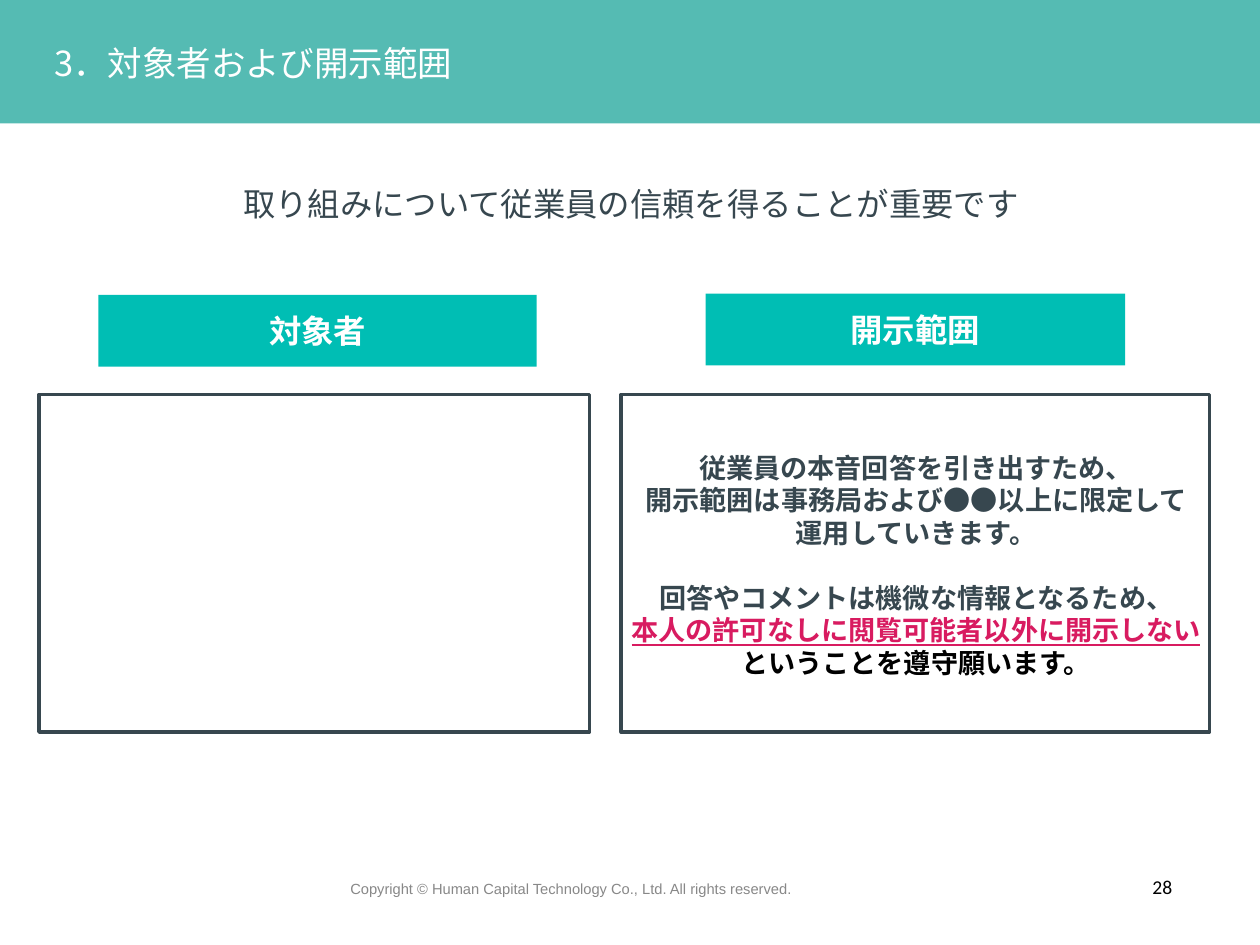
from lxml import etree
from pptx import Presentation
from pptx.dml.color import RGBColor
from pptx.enum import shapes, text
from pptx.oxml.ns import qn
from pptx.util import Inches, Pt

SLATE = RGBColor(0x37, 0x47, 0x4F)
BAND = RGBColor(0x55, 0xBB, 0xB3)
TEAL = RGBColor(0x00, 0xBE, 0xB4)
PINK = RGBColor(0xD8, 0x1B, 0x60)
GREY = RGBColor(0x88, 0x88, 0x88)
WHITE = RGBColor(0xFF, 0xFF, 0xFF)
BLACK = RGBColor(0, 0, 0)
JAPANESE = "Noto Sans CJK JP"
LEFT, CENTER = text.PP_ALIGN.LEFT, text.PP_ALIGN.CENTER
TOP, MIDDLE = text.MSO_ANCHOR.TOP, text.MSO_ANCHOR.MIDDLE

TITLE = "3．対象者および開示範囲"
MESSAGE = "取り組みについて従業員の信頼を得ることが重要です"
COPYRIGHT = "Copyright © Human Capital Technology Co., Ltd. All rights reserved."
PAGE_NUMBER = "28"
COLUMNS = [
    {"heading": "対象者", "label": (0.78, 2.34, 3.48, 0.57), "frame": (0.31, 3.13, 4.37, 2.68)},
    {"heading": "開示範囲", "label": (5.6, 2.33, 3.33, 0.57), "frame": (4.93, 3.13, 4.67, 2.68)},
]
POLICY = [
    ("従業員の本音回答を引き出すため、", SLATE),
    ("開示範囲は事務局および●●以上に限定して", SLATE),
    ("運用していきます。", SLATE),
    ("回答やコメントは機微な情報となるため、", SLATE),
    ("本人の許可なしに閲覧可能者以外に開示しない", PINK),
    ("ということを遵守願います。", BLACK),
]
SECOND_BLOCK = 3
LINE_HEIGHT = 18.6


def style(para, size, color, font=JAPANESE, bold=False, align=CENTER):
    para.alignment = align
    para.font.size = Pt(size)
    para.font.name = font
    para.font.bold = bold
    para.font.color.rgb = color
    properties = para._p.pPr.find(qn("a:defRPr"))
    etree.SubElement(properties, qn("a:ea")).set("typeface", font)


def set_frame(frame, anchor, across=0.1, down=0.05, wrap=True):
    frame.word_wrap = wrap
    frame.vertical_anchor = anchor
    frame.margin_left = frame.margin_right = Inches(across)
    frame.margin_top = frame.margin_bottom = Inches(down)


def add_rect(page, place, fill, line=None):
    rect = page.shapes.add_shape(shapes.MSO_SHAPE.RECTANGLE, *map(Inches, place))
    rect.shadow.inherit = False
    rect.fill.solid()
    rect.fill.fore_color.rgb = fill
    if line is None:
        rect.line.fill.background()
    else:
        rect.line.color.rgb = line
        rect.line.width = Pt(2)
    return rect


def add_text(page, place, words, size, color, font=JAPANESE, align=CENTER, anchor=TOP, across=0.1, down=0.05):
    box = page.shapes.add_textbox(*map(Inches, place))
    set_frame(box.text_frame, anchor, across, down)
    box.text_frame.text = words
    style(box.text_frame.paragraphs[0], size, color, font, align=align)


def add_title(page):
    title = page.shapes.title
    title.left, title.top, title.width, title.height = map(Inches, (0.43, 0.33, 3.65, 0.33))
    set_frame(title.text_frame, MIDDLE, 0, 0, wrap=False)
    title.text_frame.text = TITLE
    style(title.text_frame.paragraphs[0], 19.7, WHITE, align=LEFT)
    page.shapes._spTree.append(title._element)


def add_policy(page):
    frame = page.shapes.add_textbox(*map(Inches, (4.8, 3.53, 4.94, 1.92))).text_frame
    set_frame(frame, TOP)
    for index, (words, color) in enumerate(POLICY):
        para = frame.add_paragraph() if index else frame.paragraphs[0]
        para.text = words
        if index == SECOND_BLOCK:
            para.space_before = Pt(LINE_HEIGHT)
        style(para, 15.5, color, bold=True)
        para.font.underline = color == PINK


def main():
    deck = Presentation()
    deck.slide_width, deck.slide_height = Inches(10), Inches(7.5)
    page = deck.slides.add_slide(deck.slide_layouts[5])
    add_rect(page, (0, 0, 10, 0.98), BAND)
    add_title(page)
    add_text(page, (2.74, 6.93, 4.52, 0.24), COPYRIGHT, 8.4, GREY, "Arial", LEFT, MIDDLE, across=0.04)
    add_text(page, (8.93, 6.9, 0.59, 0.27), PAGE_NUMBER, 11.2, BLACK, "Calibri", across=0.04, down=0.04)
    add_text(page, (0.62, 1.41, 8.77, 0.41), MESSAGE, 18.5, SLATE)
    for column in COLUMNS:
        add_rect(page, column["frame"], WHITE, SLATE)
        label = add_rect(page, column["label"], TEAL)
        set_frame(label.text_frame, MIDDLE)
        label.text_frame.text = column["heading"]
        style(label.text_frame.paragraphs[0], 18.5, WHITE, bold=True)
    add_policy(page)
    deck.save("out.pptx")


if __name__ == "__main__":
    main()
